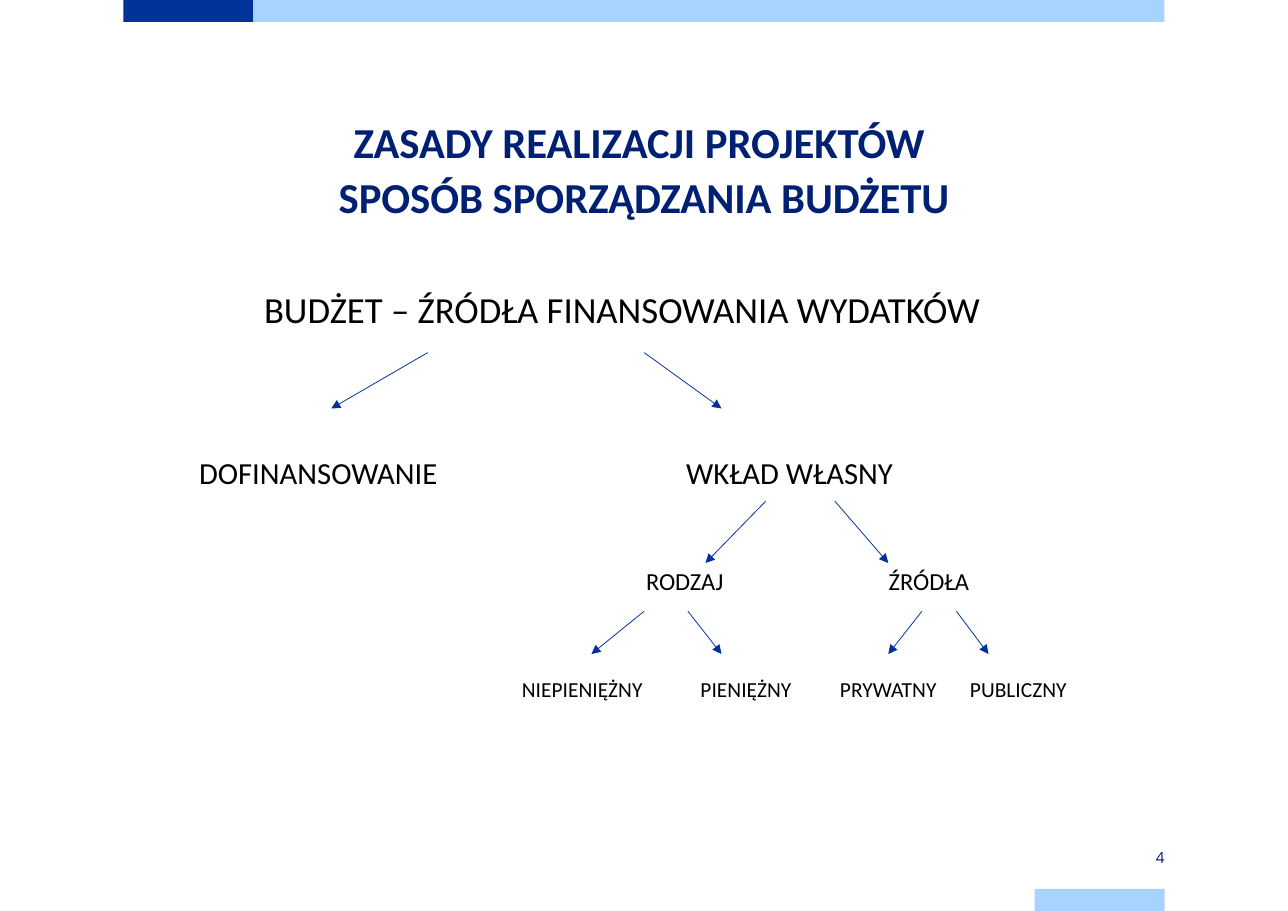
from dataclasses import dataclass

from lxml.etree import SubElement
from pptx import Presentation
from pptx.dml.color import RGBColor
from pptx.enum.shapes import MSO_CONNECTOR, MSO_SHAPE
from pptx.enum.text import MSO_ANCHOR as Anchor, PP_ALIGN as Align
from pptx.oxml.ns import qn
from pptx.slide import Slide
from pptx.util import Pt

NAVY, BLUE, SKY, BLACK = "002073", "003399", "A6D3FF", "000000"
SLIDE_WIDTH, SLIDE_HEIGHT = 841.68, 595.44
MARGIN, CONTENT_WIDTH = 80.64, 680.4
BAR_WIDTH, BAR_HEIGHT = 85, 14.4
RIGHT_EDGE = MARGIN + CONTENT_WIDTH


@dataclass
class Box:
    left: float
    top: float
    width: float
    height: float


@dataclass
class TextStyle:
    size: float
    color: str = BLACK
    font: str = "Calibri"
    bold: bool = False
    align: Align = Align.CENTER
    line_spacing: float | None = None


@dataclass
class Level:
    size: float
    middle: float
    label_width: float
    labels: dict[str, float]


@dataclass
class ArrowTier:
    top: float
    bottom: float
    spans: list[tuple[float, float]]


BARS = [
    (Box(MARGIN, 0, BAR_WIDTH, BAR_HEIGHT), BLUE),
    (Box(MARGIN + BAR_WIDTH, 0, CONTENT_WIDTH - BAR_WIDTH, BAR_HEIGHT), SKY),
    (Box(RIGHT_EDGE - BAR_WIDTH, SLIDE_HEIGHT - BAR_HEIGHT, BAR_WIDTH, BAR_HEIGHT), SKY),
]
LEVELS = [
    Level(24, 202, 520, {"BUDŻET – ŹRÓDŁA FINANSOWANIA WYDATKÓW": 406.5}),
    Level(20, 309, 180, {"DOFINANSOWANIE": 208, "WKŁAD WŁASNY": 516}),
    Level(16, 379.5, 80, {"RODZAJ": 447.5, "ŹRÓDŁA": 607}),
    Level(14, 450, 85, {"NIEPIENIĘŻNY": 380.5, "PIENIĘŻNY": 487.5,
                        "PRYWATNY": 580.5, "PUBLICZNY": 665.5}),
]
ARROW_TIERS = [
    ArrowTier(230.5, 267, [(279.5, 216.5), (421, 471.5)]),
    ArrowTier(327.5, 368, [(500.5, 461), (545.5, 580.5)]),
    ArrowTier(399.5, 427.5, [(421, 386.5), (449.5, 471.5), (602.5, 580.5), (625, 646)]),
]


def rgb(value: str) -> RGBColor:
    return RGBColor.from_string(value)


def add_bar(slide: Slide, box: Box, color: str) -> None:
    bar = slide.shapes.add_shape(
        MSO_SHAPE.RECTANGLE, Pt(box.left), Pt(box.top), Pt(box.width), Pt(box.height))
    bar.shadow.inherit = False
    bar.fill.solid()
    bar.fill.fore_color.rgb = rgb(color)
    bar.line.fill.background()


def add_text(slide: Slide, text: str, box: Box, style: TextStyle) -> None:
    frame = slide.shapes.add_textbox(
        Pt(box.left), Pt(box.top), Pt(box.width), Pt(box.height)).text_frame
    frame.word_wrap = True
    frame.vertical_anchor = Anchor.MIDDLE
    frame.margin_left = frame.margin_right = frame.margin_top = frame.margin_bottom = 0
    paragraph = frame.paragraphs[0]
    paragraph.text = text
    paragraph.alignment = style.align
    if style.line_spacing:
        paragraph.line_spacing = Pt(style.line_spacing)
    for run in paragraph.runs:
        run.font.name = style.font
        run.font.size = Pt(style.size)
        run.font.bold = style.bold
        run.font.color.rgb = rgb(style.color)


def add_level(slide: Slide, level: Level) -> None:
    height = level.size * 1.5
    for text, center in level.labels.items():
        box = Box(center - level.label_width / 2, level.middle - height / 2,
                  level.label_width, height)
        add_text(slide, text, box, TextStyle(level.size))


def add_arrows(slide: Slide, tier: ArrowTier) -> None:
    for start, end in tier.spans:
        arrow = slide.shapes.add_connector(
            MSO_CONNECTOR.STRAIGHT, Pt(start), Pt(tier.top), Pt(end), Pt(tier.bottom))
        arrow.line.color.rgb = rgb(BLUE)
        arrow.line.width = Pt(0.5)
        properties = arrow._element.spPr
        SubElement(properties.find(qn("a:ln")), qn("a:tailEnd"), type="triangle")
        SubElement(properties, qn("a:effectLst"))


def main() -> None:
    presentation = Presentation()
    presentation.slide_width = Pt(SLIDE_WIDTH)
    presentation.slide_height = Pt(SLIDE_HEIGHT)
    slide = presentation.slides.add_slide(presentation.slide_layouts[6])
    for box, color in BARS:
        add_bar(slide, box, color)
    add_text(slide, "ZASADY REALIZACJI PROJEKTÓW \vSPOSÓB SPORZĄDZANIA BUDŻETU",
             Box(MARGIN, 73, CONTENT_WIDTH, 72),
             TextStyle(27.9, NAVY, bold=True, line_spacing=36))
    for level in LEVELS:
        add_level(slide, level)
    add_text(slide, "4", Box(RIGHT_EDGE - BAR_WIDTH, 553, BAR_WIDTH, BAR_HEIGHT),
             TextStyle(10, NAVY, "Open Sans", align=Align.RIGHT))
    for tier in ARROW_TIERS:
        add_arrows(slide, tier)
    presentation.save("out.pptx")


if __name__ == "__main__":
    main()
